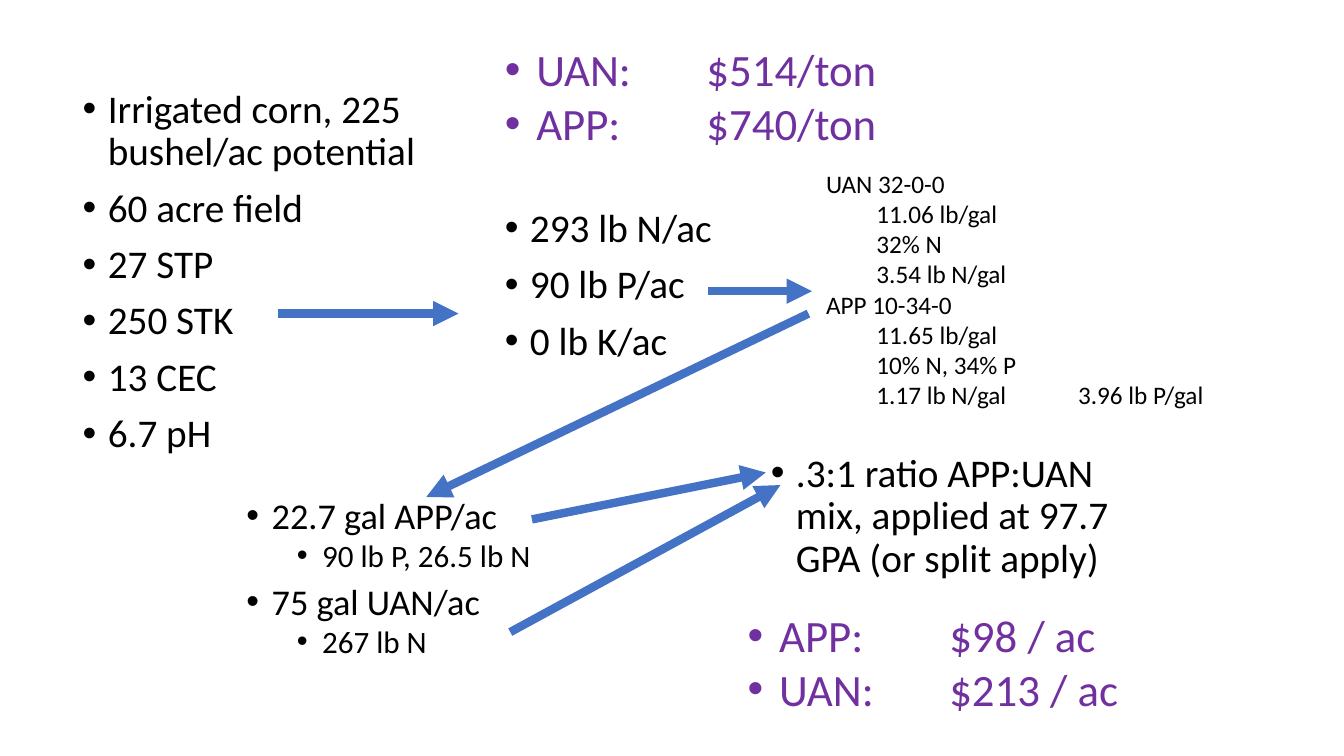
from lxml import etree
from pptx import Presentation
from pptx.dml.color import RGBColor
from pptx.enum.shapes import MSO_CONNECTOR
from pptx.oxml.ns import qn
from pptx.util import Pt

STRAIGHT = MSO_CONNECTOR.STRAIGHT
BLACK = RGBColor(0x00, 0x00, 0x00)
PURPLE = RGBColor(0x70, 0x30, 0xA0)
BLUE = RGBColor(0x44, 0x72, 0xC4)
FONT = "Calibri"
TAB_WIDTH = Pt(72)
TOP_SIDE = 0

FIELD = ["Irrigated corn, 225 bushel/ac potential", "60 acre field", "27 STP",
         "250 STK", "13 CEC", "6.7 pH"]
NEEDS = ["293 lb N/ac", "90 lb P/ac", "0 lb K/ac"]
TON_PRICES = ["UAN: \t$514/ton", "APP: \t$740/ton"]
ACRE_COSTS = ["APP: \t$98 / ac", "UAN:\t$213 / ac"]
RATIO = [".3:1 ratio APP:UAN mix, applied at 97.7 GPA (or split apply)"]
PRODUCTS = [
    ("UAN 32-0-0", ["11.06 lb/gal", "32% N", "3.54 lb N/gal"]),
    ("APP 10-34-0", ["11.65 lb/gal", "10% N, 34% P",
                     "1.17 lb N/gal\t3.96 lb P/gal"]),
]
RATES = [("22.7 gal APP/ac", ["90 lb P, 26.5 lb N"]),
         ("75 gal UAN/ac", ["267 lb N"])]


def add_box(slide, left, top, width, height):
    box = slide.shapes.add_textbox(Pt(left), Pt(top), Pt(width), Pt(height))
    box.text_frame.word_wrap = True
    return box


def add_line(box, text, size, color=BLACK, level=0, margin=0, hanging=0,
             line_spacing=1.0, space_before=0):
    """Append a paragraph; a hanging indent above zero gives it a bullet."""
    frame = box.text_frame
    first = not frame.paragraphs[0].runs
    paragraph = frame.paragraphs[0] if first else frame.add_paragraph()
    paragraph.level = level
    properties = paragraph._p.get_or_add_pPr()
    properties.set("marL", str(Pt(margin)))
    properties.set("indent", str(-Pt(hanging)))
    properties.set("defTabSz", str(TAB_WIDTH))
    if hanging:
        etree.SubElement(properties, qn("a:buFont"), typeface="Arial")
        etree.SubElement(properties, qn("a:buChar"), char="•")
    paragraph.line_spacing = line_spacing
    paragraph.space_before = Pt(0 if first else space_before)
    run = paragraph.add_run()
    run.text = text
    run.font.name = FONT
    run.font.size = Pt(size)
    run.font.color.rgb = color


def add_facts(slide, facts, left, top, width, height):
    box = add_box(slide, left, top, width, height)
    for fact in facts:
        add_line(box, fact, 28, margin=18, hanging=18, line_spacing=0.9,
                 space_before=10)


def add_prices(slide, prices, left, top):
    box = add_box(slide, left, top, 347, 85)
    for price in prices:
        add_line(box, price, 32, PURPLE, margin=22.5, hanging=22.5)


def add_products(slide, left, top):
    box = add_box(slide, left, top, 340, 181.5)
    for product, details in PRODUCTS:
        add_line(box, product, 18, level=1, margin=36)
        for detail in details:
            add_line(box, detail, 18, level=2, margin=72)


def add_rates(slide, left, top):
    box = add_box(slide, left, top, 271, 124.5)
    for rate, nutrients in RATES:
        add_line(box, rate, 25.9, margin=18, hanging=18, line_spacing=0.8,
                 space_before=10)
        for nutrient in nutrients:
            add_line(box, nutrient, 22.2, level=1, margin=54, hanging=18,
                     line_spacing=0.8, space_before=5)
    return box


def add_arrow(slide, x1, y1, x2, y2):
    arrow = slide.shapes.add_connector(STRAIGHT, Pt(x1), Pt(y1), Pt(x2), Pt(y2))
    arrow.line.color.rgb = BLUE
    arrow.line.width = Pt(6)
    etree.SubElement(arrow.line._get_or_add_ln(), qn("a:tailEnd"), type="triangle")
    etree.SubElement(arrow._element.spPr, qn("a:effectLst"))
    return arrow


def main():
    deck = Presentation()
    deck.slide_width, deck.slide_height = Pt(960), Pt(540)
    slide = deck.slides.add_slide(deck.slide_layouts[6])

    add_facts(slide, FIELD, 52, 60.5, 252.5, 342.5)
    add_facts(slide, NEEDS, 353.5, 145.5, 193.5, 132.5)
    add_arrow(slide, 198.5, 224, 327.5, 224)
    add_prices(slide, TON_PRICES, 353.5, 26.5)
    add_products(slide, 547, 116.5)
    rates = add_rates(slide, 169, 355)
    add_facts(slide, RATIO, 543.5, 320.5, 271, 124.5)
    add_arrow(slide, 506, 208, 580, 208)
    products_to_rates = add_arrow(slide, 577.5, 224, 304.5, 355)
    products_to_rates.end_connect(rates, TOP_SIDE)
    add_arrow(slide, 380, 371, 547, 337.5)
    add_arrow(slide, 364.5, 451.5, 557.5, 346.5)
    add_prices(slide, ACRE_COSTS, 527, 430.5)

    deck.save("out.pptx")


if __name__ == "__main__":
    main()
